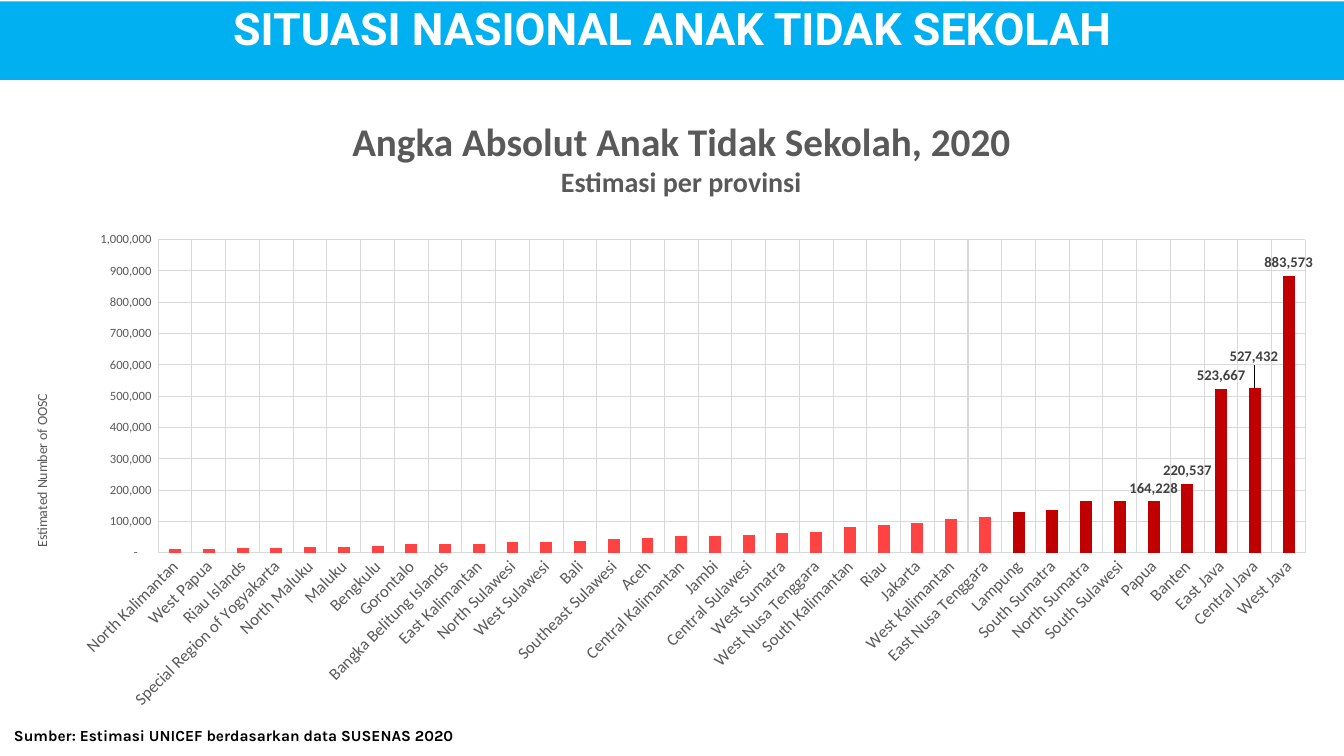
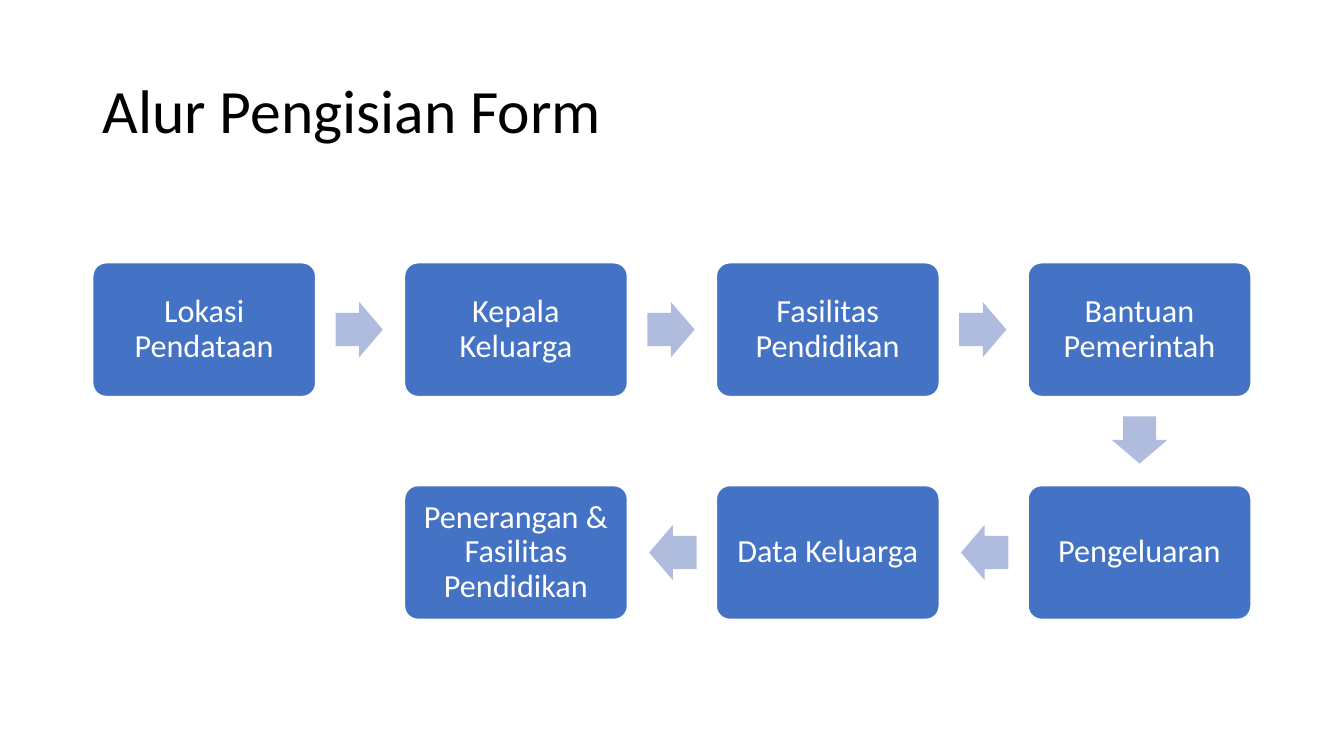
"""Two slides on out-of-school children: provincial totals and the form flow."""
from itertools import pairwise

from pptx import Presentation
from pptx.chart.data import CategoryChartData
from pptx.dml.color import RGBColor
from pptx.enum.chart import XL_CHART_TYPE, XL_LABEL_POSITION, XL_TICK_MARK
from pptx.enum.shapes import MSO_SHAPE
from pptx.enum.text import MSO_ANCHOR, MSO_AUTO_SIZE, PP_ALIGN
from pptx.oxml import parse_xml
from pptx.oxml.ns import nsdecls, qn
from pptx.util import Pt

BAND_BLUE = RGBColor(0x00, 0xB0, 0xF0)
STEP_BLUE = RGBColor(0x44, 0x72, 0xC4)
ARROW_BLUE = RGBColor(0xB0, 0xBC, 0xDE)
BAR_RED = RGBColor(0xFF, 0x43, 0x43)
BAR_DARK_RED = RGBColor(0xC0, 0x00, 0x00)
GRID_GRAY = RGBColor(0xD9, 0xD9, 0xD9)
TEXT_GRAY = RGBColor(0x59, 0x59, 0x59)
LABEL_GRAY = RGBColor(0x40, 0x40, 0x40)
WHITE = RGBColor(0xFF, 0xFF, 0xFF)
BLACK = RGBColor(0x00, 0x00, 0x00)

PROVINCES = {
    "North Kalimantan": 10585, "West Papua": 11985, "Riau Islands": 13912,
    "Special Region of Yogyakarta": 14685, "North Maluku": 17122, "Maluku": 18980,
    "Bengkulu": 22172, "Gorontalo": 26617, "Bangka Belitung Islands": 28580,
    "East Kalimantan": 28626, "North Sulawesi": 33001, "West Sulawesi": 33722,
    "Bali": 37312, "Southeast Sulawesi": 45195, "Aceh": 46238,
    "Central Kalimantan": 52915, "Jambi": 53686, "Central Sulawesi": 57048,
    "West Sumatra": 64227, "West Nusa Tenggara": 65178, "South Kalimantan": 81294,
    "Riau": 87771, "Jakarta": 96249, "West Kalimantan": 108068,
    "East Nusa Tenggara": 112771, "Lampung": 129375, "South Sumatra": 137877,
    "North Sumatra": 163818, "South Sulawesi": 163940, "Papua": 164228,
    "Banten": 220537, "East Java": 523667, "Central Java": 527432, "West Java": 883573,
}
DARK_BARS, LABELLED_BARS = 9, 5
LIFTED_PROVINCE, LABEL_LIFT = "Central Java", 12.8
COUNT_FORMAT = r'_(* #,##0_);_(* \(#,##0\);_(* "-"??_);_(@_)'
CHART_LEFT, CHART_TOP, CHART_WIDTH, CHART_HEIGHT = 9.2, 159.5, 943, 355

STEPS = [
    ("Lokasi Pendataan", 0, 0), ("Kepala Keluarga", 1, 0),
    ("Fasilitas Pendidikan", 2, 0), ("Bantuan Pemerintah", 3, 0),
    ("Pengeluaran", 3, 1), ("Data Keluarga", 2, 1),
    ("Penerangan & Fasilitas Pendidikan", 1, 1),
]
FLOW_LEFT, FLOW_TOP = 66.3, 187.7
STEP_WIDTH, STEP_HEIGHT = 159.2, 95.5
COLUMN_PITCH, ROW_PITCH = 222.7, 159.2
ARROW_LENGTH, ARROW_BREADTH, ARROW_GAP = 33.8, 39.5, 14.2
ARROW_ROTATION = {(1, 0): 0, (0, 1): 90, (-1, 0): 180}


def apply(target, **values):
    """Set each given attribute on the target."""
    for attribute, value in values.items():
        setattr(target, attribute, value)


def style_font(font, size, color, name="Calibri", bold=False):
    """Give a font its size, colour, family and weight."""
    apply(font, size=Pt(size), name=name, bold=bold)
    font.color.rgb = color


def write(frame, lines, color, name="Calibri", bold=False, align=PP_ALIGN.LEFT,
          anchor=MSO_ANCHOR.TOP, spacing=1.0):
    """Fill a text frame with one paragraph per (text, size) pair."""
    apply(frame, word_wrap=True, auto_size=MSO_AUTO_SIZE.NONE, vertical_anchor=anchor)
    for index, (text, size) in enumerate(lines):
        paragraph = frame.add_paragraph() if index else frame.paragraphs[0]
        apply(paragraph, alignment=align, line_spacing=spacing)
        run = paragraph.add_run()
        run.text = text
        style_font(run.font, size, color, name, bold)


def add_titled_slide(deck, title, box, size, color, fill=None, **text_style):
    """Add a title-only slide and format its title."""
    slide = deck.slides.add_slide(deck.slide_layouts[5])
    heading = slide.shapes.title
    left, top, width, height = map(Pt, box)
    apply(heading, left=left, top=top, width=width, height=height)
    if fill is not None:
        heading.fill.solid()
        heading.fill.fore_color.rgb = fill
    write(heading.text_frame, [(title, size)], color, spacing=0.9, **text_style)
    return slide


def add_text(slide, box, lines, color, **text_style):
    """Add a text box."""
    frame = slide.shapes.add_textbox(*map(Pt, box)).text_frame
    write(frame, lines, color, **text_style)


def add_filled(slide, preset, box, fill, adjustments):
    """Add a flat preset shape without outline."""
    shape = slide.shapes.add_shape(preset, *map(Pt, box))
    shape.shadow.inherit = False
    shape.fill.solid()
    shape.fill.fore_color.rgb = fill
    shape.line.fill.background()
    for index, value in enumerate(adjustments):
        shape.adjustments[index] = value
    return shape


def place(element, index, x, y, size=None, mode="edge"):
    """Give a chart part a manual layout, from points within the chart."""
    for old in element.findall(qn("c:layout")):
        element.remove(old)
    settings = []
    if size:
        settings.append(("layoutTarget", "inner"))
    if mode == "edge":
        settings += [("xMode", "edge"), ("yMode", "edge")]
    settings += [("x", x / CHART_WIDTH), ("y", y / CHART_HEIGHT)]
    if size:
        width, height = size
        settings += [("w", width / CHART_WIDTH), ("h", height / CHART_HEIGHT)]
    body = "".join(f'<c:{tag} val="{value}"/>' for tag, value in settings)
    element.insert(index, parse_xml(
        f'<c:layout {nsdecls("c")}><c:manualLayout>{body}</c:manualLayout></c:layout>'))


def style_axis(axis, size):
    """Set gridlines, tick marks and tick labels of an axis."""
    apply(axis, has_major_gridlines=True, major_tick_mark=XL_TICK_MARK.NONE,
          minor_tick_mark=XL_TICK_MARK.NONE)
    grid = axis.major_gridlines.format.line
    grid.width = Pt(0.75)
    grid.color.rgb = GRID_GRAY
    style_font(axis.tick_labels.font, size, TEXT_GRAY)


def style_value_axis(axis):
    """Scale the value axis and add its title."""
    style_axis(axis, 9)
    apply(axis, minimum_scale=0, maximum_scale=1000000, major_unit=100000)
    apply(axis.tick_labels, number_format=COUNT_FORMAT, number_format_is_linked=False)
    axis.format.line.fill.background()
    frame = axis.axis_title.text_frame
    frame.text = "Estimated Number of OOSC"
    style_font(frame.paragraphs[0].runs[0].font, 10, TEXT_GRAY)
    title = axis._element.find(qn("c:title"))
    title.xpath(".//a:bodyPr")[0].set("rot", "-5400000")
    place(title, 1, 12.5, 120.2)


def style_category_axis(axis):
    """Draw the province axis with slanted labels."""
    style_axis(axis, 12)
    axis.format.line.width = Pt(0.75)
    axis.format.line.color.rgb = GRID_GRAY
    axis._element.xpath("./c:txPr/a:bodyPr")[0].set("rot", "-2700000")


def style_bars(series):
    """Colour the bars and label the largest ones."""
    apply(series, invert_if_negative=False)
    series.format.fill.solid()
    series.format.fill.fore_color.rgb = BAR_RED
    series.data_labels.show_value = False
    labels = series._element.find(qn("c:dLbls"))
    count = len(PROVINCES)
    for index, province in enumerate(PROVINCES):
        point = series.points[index]
        if index >= count - DARK_BARS:
            point.format.fill.solid()
            point.format.fill.fore_color.rgb = BAR_DARK_RED
        if index >= count - LABELLED_BARS:
            style_font(point.data_label.font, 10.5, LABEL_GRAY, bold=True)
            point.data_label.position = XL_LABEL_POSITION.OUTSIDE_END
            if province == LIFTED_PROVINCE:
                label = labels.xpath(f'./c:dLbl[c:idx/@val="{index}"]')[0]
                place(label, 1, -0.7, -LABEL_LIFT, mode="factor")
    labels.append(parse_xml(
        f'<c:extLst {nsdecls("c")}><c:ext uri="{{CE6537A1-D6FC-4f65-9D91-7224C49458BB}}" '
        'xmlns:c15="http://schemas.microsoft.com/office/drawing/2012/chart">'
        '<c15:showLeaderLines val="1"/></c:ext></c:extLst>'))


def add_province_chart(slide):
    """Add the column chart of provinces."""
    data = CategoryChartData(number_format="#,##0")
    data.categories = list(PROVINCES)
    data.add_series("Series 1", list(PROVINCES.values()))
    box = (CHART_LEFT, CHART_TOP, CHART_WIDTH, CHART_HEIGHT)
    chart = slide.shapes.add_chart(
        XL_CHART_TYPE.COLUMN_CLUSTERED, *map(Pt, box), data).chart
    apply(chart, has_title=False, has_legend=False)
    style_font(chart.font, 10, BLACK)
    plot = chart.plots[0]
    apply(plot, gap_width=182, vary_by_categories=False)
    style_bars(plot.series[0])
    style_category_axis(chart.category_axis)
    style_value_axis(chart.value_axis)
    place(chart._chartSpace.xpath(".//c:plotArea")[0], 0, 103.8, 11.7, (819.5, 223.7))


def add_step(slide, text, column, row):
    """Add one step box of the form flow."""
    box = (FLOW_LEFT + column * COLUMN_PITCH, FLOW_TOP + row * ROW_PITCH,
           STEP_WIDTH, STEP_HEIGHT)
    step = add_filled(slide, MSO_SHAPE.ROUNDED_RECTANGLE, box, STEP_BLUE, [0.1])
    step.line.width = Pt(1)
    step.line.color.rgb = WHITE
    margins = ("margin_left", "margin_right", "margin_top", "margin_bottom")
    apply(step.text_frame, **dict.fromkeys(margins, Pt(10)))
    write(step.text_frame, [(text, 23)], WHITE, align=PP_ALIGN.CENTER,
          anchor=MSO_ANCHOR.MIDDLE, spacing=0.9)


def add_step_arrow(slide, start, end):
    """Add the block arrow that leads from one step to the next."""
    (_, column, row), (_, next_column, next_row) = start, end
    across, down = next_column - column, next_row - row
    reach = ARROW_GAP + ARROW_LENGTH / 2
    center_x = (FLOW_LEFT + column * COLUMN_PITCH + STEP_WIDTH / 2
                + across * (STEP_WIDTH / 2 + reach))
    center_y = (FLOW_TOP + row * ROW_PITCH + STEP_HEIGHT / 2
                + down * (STEP_HEIGHT / 2 + reach))
    box = (center_x - ARROW_LENGTH / 2, center_y - ARROW_BREADTH / 2,
           ARROW_LENGTH, ARROW_BREADTH)
    arrow = add_filled(slide, MSO_SHAPE.RIGHT_ARROW, box, ARROW_BLUE, [0.6, 0.5])
    arrow.rotation = ARROW_ROTATION[across, down]


def build_national_slide(deck):
    """Build the slide with the provincial totals."""
    slide = add_titled_slide(
        deck, "SITUASI NASIONAL ANAK TIDAK SEKOLAH", (0, 1, 961, 56), 32, WHITE,
        fill=BAND_BLUE, name="Roboto", bold=True, align=PP_ALIGN.CENTER)
    add_text(slide, (169.8, 80.6, 633.6, 65.5),
             [("Angka Absolut Anak Tidak Sekolah, 2020", 28), ("Estimasi per provinsi", 20)],
             TEXT_GRAY, bold=True, align=PP_ALIGN.CENTER)
    add_province_chart(slide)
    add_text(slide, (2.9, 514.9, 488, 21),
             [("Sumber: Estimasi UNICEF berdasarkan data SUSENAS 2020", 11)],
             BLACK, name="Karla", bold=True)


def build_flow_slide(deck):
    """Build the slide with the form flow."""
    slide = add_titled_slide(deck, "Alur Pengisian Form", (66, 28.8, 828, 104.4), 44,
                             BLACK, anchor=MSO_ANCHOR.MIDDLE)
    for step in STEPS:
        add_step(slide, *step)
    for start, end in pairwise(STEPS):
        add_step_arrow(slide, start, end)


def main():
    """Build and save the deck."""
    deck = Presentation()
    apply(deck, slide_width=Pt(960), slide_height=Pt(540))
    build_national_slide(deck)
    build_flow_slide(deck)
    deck.save("out.pptx")


if __name__ == "__main__":
    main()
